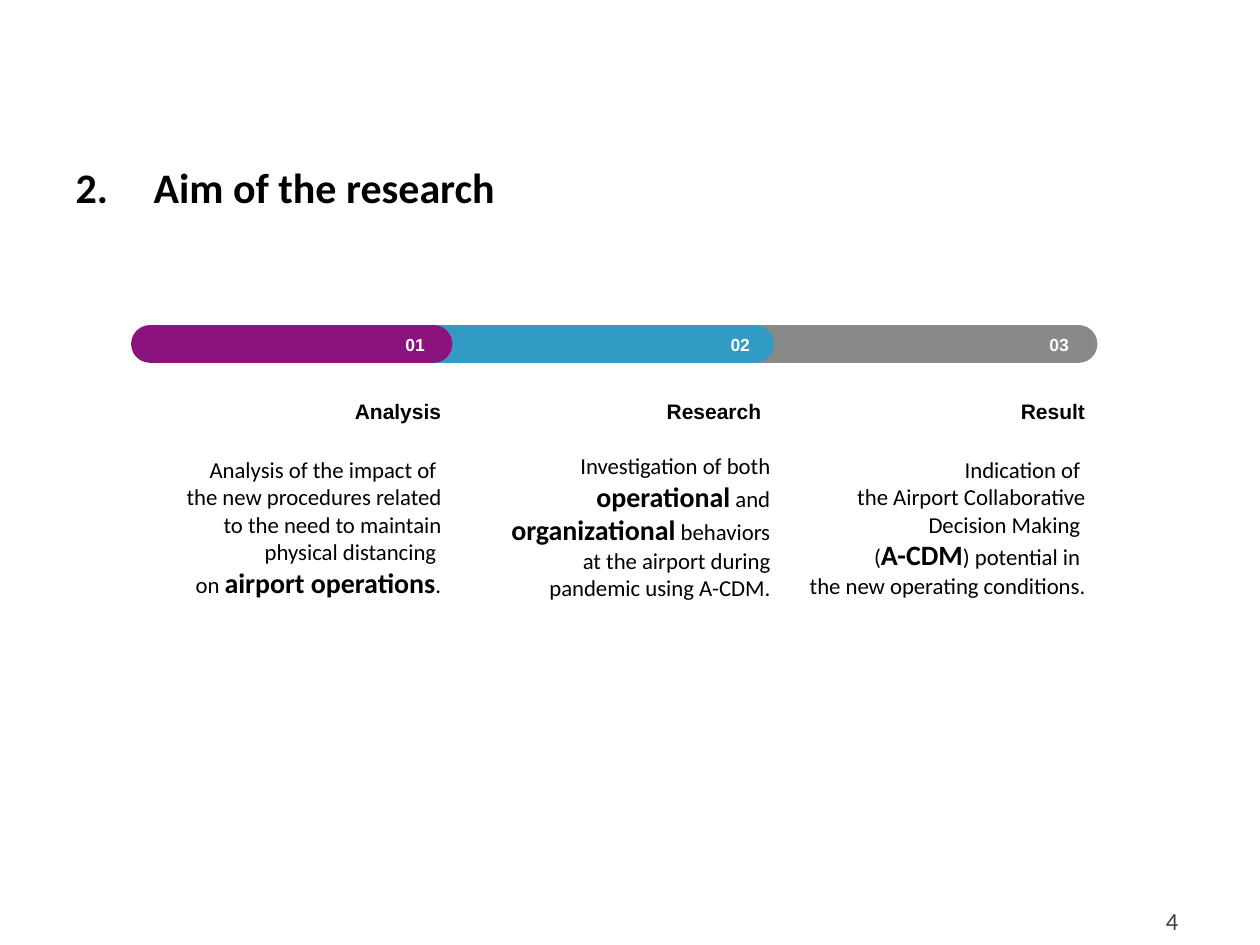
from dataclasses import dataclass

from lxml.etree import SubElement
from pptx import Presentation
from pptx.dml.color import RGBColor
from pptx.enum.shapes import MSO_SHAPE
from pptx.enum.text import MSO_ANCHOR, MSO_AUTO_SIZE, PP_ALIGN
from pptx.oxml.ns import qn
from pptx.util import Inches, Pt


@dataclass(frozen=True)
class Theme:
    heading_font: str = "Arial"
    body_font: str = "Calibri"
    ink: str = "000000"
    page_ink: str = "404040"
    on_bar: str = "FEFEFE"
    purple: str = "8C127E"
    blue: str = "329BC5"
    grey: str = "898989"
    title_size: int = 24
    strong_size: int = 16
    page_size: int = 14
    body_size: int = 13
    heading_size: int = 12
    number_size: int = 10


@dataclass(frozen=True)
class Stage:
    number: str
    heading: str
    spans: tuple
    color: str
    bar: tuple
    number_left: float
    heading_left: float
    body: tuple


THEME = Theme()
GRID_COLUMNS, GRID_ROWS = 100, 75

STAGES = (
    Stage(
        "01", "Analysis",
        (("Analysis of the impact of \nthe new procedures related to the need "
          "to maintain physical distancing \non ", False),
         ("airport operations", True), (".", False)),
        THEME.purple, (10.4, 25.5), 29.6, 21, (12.6, 35.6, 23.4, 12.5),
    ),
    Stage(
        "02", "Research",
        (("Investigation of both ", False), ("operational", True),
         (" and ", False), ("organizational", True),
         (" behaviors at the airport during pandemic using A-CDM.", False)),
        THEME.blue, (32, 29.4), 55.4, 46.4, (38.7, 35.3, 23.4, 13),
    ),
    Stage(
        "03", "Result",
        (("Indication of \nthe Airport Collaborative Decision Making \n(", False),
         ("A-CDM", True),
         (") potential in \nthe new operating conditions.", False)),
        THEME.grey, (57.6, 29.5), 80.7, 72.1, (62.9, 35.6, 24.2, 12.5),
    ),
)


def add_text(para, text, *, font, size, color, bold=False):
    for index, line in enumerate(text.split("\n")):
        if index:
            para.add_line_break()
        span = para.add_run()
        span.text = line
        span.font.name = font
        span.font.size = Pt(size)
        span.font.bold = bold
        span.font.color.rgb = RGBColor.from_string(color)


class SlideBuilder:
    def __init__(self, deck, theme):
        self.theme = theme
        self.column = deck.slide_width / GRID_COLUMNS
        self.row = deck.slide_height / GRID_ROWS
        self.page = deck.slides.add_slide(deck.slide_layouts[5])

    def place(self, left, top, width, height):
        return (round(left * self.column), round(top * self.row),
                round(width * self.column), round(height * self.row))

    def title(self, text, number, area):
        box = self.page.shapes.title
        box.left, box.top, box.width, box.height = self.place(*area)
        box.text_frame.auto_size = MSO_AUTO_SIZE.NONE
        box.text_frame.vertical_anchor = MSO_ANCHOR.TOP
        para = box.text_frame.paragraphs[0]
        para.alignment = PP_ALIGN.LEFT
        properties = para._p.get_or_add_pPr()
        indent = Inches(0.62)
        properties.set("marL", str(indent))
        properties.set("indent", str(-indent))
        SubElement(properties, qn("a:buFont"), typeface=self.theme.body_font)
        SubElement(properties, qn("a:buAutoNum"), type="arabicPeriod",
                   startAt=str(number))
        add_text(para, text, font=self.theme.body_font,
                 size=self.theme.title_size, color=self.theme.ink, bold=True)

    def bar(self, area, color):
        shape = self.page.shapes.add_shape(
            MSO_SHAPE.ROUNDED_RECTANGLE, *self.place(*area))
        shape.adjustments[0] = 0.5
        shape.shadow.inherit = False
        shape.fill.solid()
        shape.fill.fore_color.rgb = RGBColor.from_string(color)
        shape.line.fill.background()

    def text_box(self, area, anchor=MSO_ANCHOR.MIDDLE, spacing=None):
        box = self.page.shapes.add_textbox(*self.place(*area))
        frame = box.text_frame
        frame.word_wrap = True
        frame.vertical_anchor = anchor
        para = frame.paragraphs[0]
        para.alignment = PP_ALIGN.RIGHT
        para.line_spacing = spacing
        return para

    def number(self, stage):
        para = self.text_box((stage.number_left, 26, 5.1, 2.7))
        add_text(para, stage.number, font=self.theme.heading_font,
                 size=self.theme.number_size, color=self.theme.on_bar, bold=True)

    def heading(self, stage):
        para = self.text_box((stage.heading_left, 31, 15, 3.1), spacing=1.1)
        add_text(para, stage.heading, font=self.theme.heading_font,
                 size=self.theme.heading_size, color=self.theme.ink, bold=True)

    def body(self, stage):
        para = self.text_box(stage.body)
        for text, strong in stage.spans:
            size = self.theme.strong_size if strong else self.theme.body_size
            add_text(para, text, font=self.theme.body_font, size=size,
                     color=self.theme.ink, bold=strong)

    def page_number(self, text, area):
        para = self.text_box(area, anchor=MSO_ANCHOR.TOP)
        add_text(para, text, font=self.theme.body_font,
                 size=self.theme.page_size, color=self.theme.page_ink)


def main():
    deck = Presentation()
    deck.slide_width, deck.slide_height = Inches(10), Inches(7.5)
    builder = SlideBuilder(deck, THEME)
    builder.title("Aim of the research", 2, (5, 12.3, 90, 4.4))
    builder.page_number("4", (71.2, 71.4, 23.3, 3.3))
    for stage in reversed(STAGES):
        left, width = stage.bar
        builder.bar((left, 25.8, width, 3), stage.color)
    for stage in STAGES:
        builder.heading(stage)
        builder.number(stage)
        builder.body(stage)
    deck.save("out.pptx")


if __name__ == "__main__":
    main()
